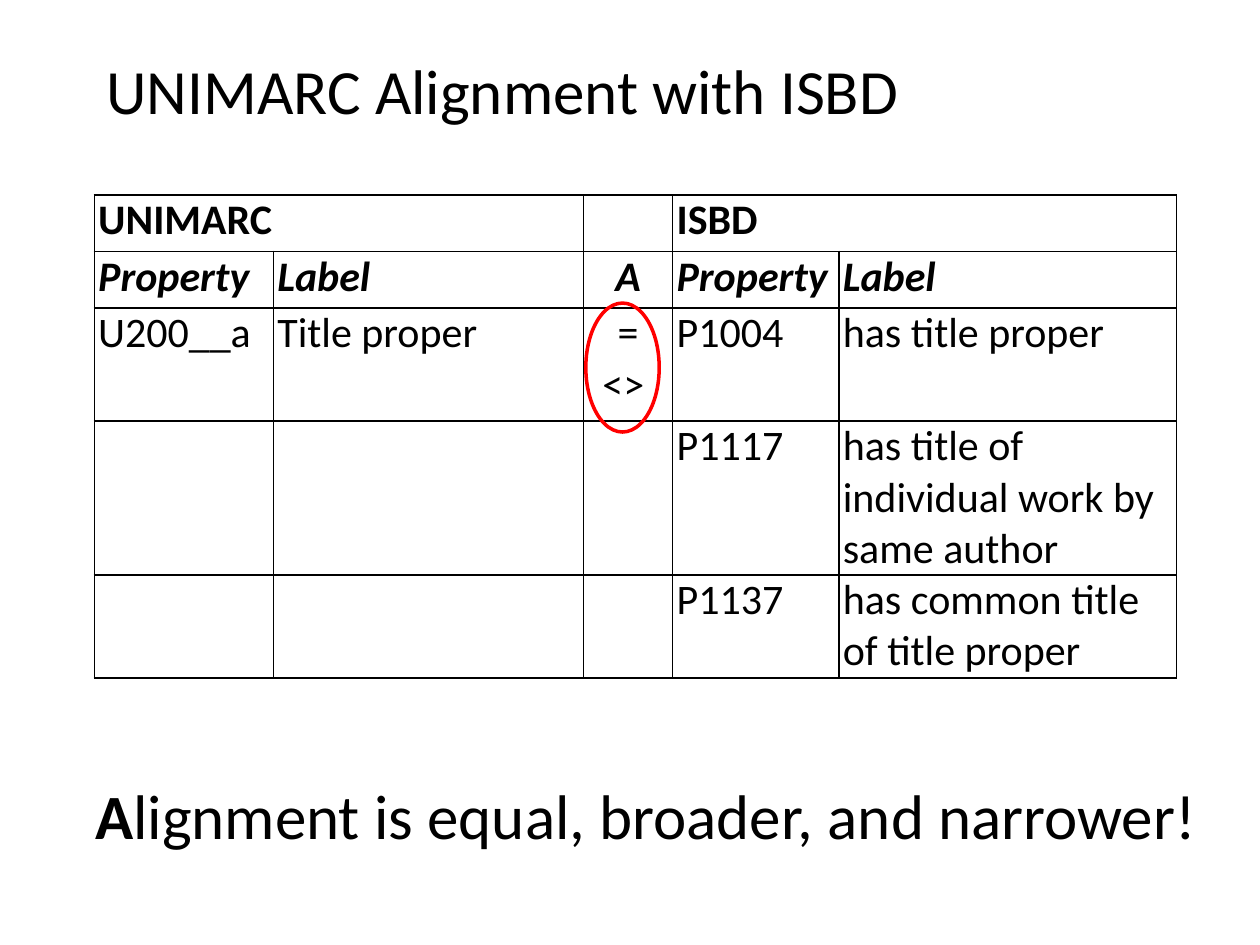
import pptx
import pptx.util
import pptx.oxml
import pptx.dml.color
import pptx.enum.shapes
import pptx.enum.text
from dataclasses import dataclass

Cm, Pt = pptx.util.Cm, pptx.util.Pt
RGB = pptx.dml.color.RGBColor
ALIGN = pptx.enum.text.PP_ALIGN
NS = "http://schemas.openxmlformats.org/drawingml/2006/main"


@dataclass(frozen=True)
class Theme:
    face: str = "Calibri"
    ink: str = "000000"
    mark: str = "FF0000"
    large: int = 36
    body: int = 24
    rule: int = 1
    ring: int = 2


THEME = Theme()

COLS = [3.61, 6.25, 1.80, 3.35, 6.81]
ROWS = [1.14, 1.14, 2.28, 3.10, 2.08]
CELLS = [
    ["UNIMARC", "", "", "ISBD", ""],
    ["Property", "Label", "A", "Property", "Label"],
    ["U200__a", "Title proper", "=\n<> ", "P1004", "has title proper"],
    ["", "", "", "P1117", "has title of individual work by same author"],
    ["", "", "", "P1137", "has common title of title proper"],
]
STYLES = [{"bold": True}, {"bold": True, "italic": True}]  # by head row
MID = 2  # column of alignment signs


def put(item, form):
    for key, val in form.items():
        setattr(item, key, val)


def write(par, text, size, **form):
    run = par.add_run()
    run.text = text
    put(run.font, {"name": THEME.face, "size": Pt(size), "bold": False, **form})
    run.font.color.rgb = RGB.from_string(THEME.ink)


def border(cell):
    props = cell._tc.get_or_add_tcPr()
    for spot, side in enumerate("LRTB"):
        line = pptx.oxml.parse_xml(
            f'<a:ln{side} xmlns:a="{NS}" w="{Pt(THEME.rule)}"><a:solidFill>'
            f'<a:srgbClr val="{THEME.ink}"/></a:solidFill></a:ln{side}>')
        props.insert(spot, line)


def add_line(slide, box, parts, align):
    """One line of large text; parts are (text, bold) pairs."""
    frame = slide.shapes.add_textbox(*map(Cm, box)).text_frame
    put(frame, {"word_wrap": False,
                "auto_size": pptx.enum.text.MSO_AUTO_SIZE.SHAPE_TO_FIT_TEXT})
    par = frame.paragraphs[0]
    par.alignment = align
    for text, bold in parts:
        write(par, text, THEME.large, bold=bold)


def fill_cell(cell, text, style, align):
    put(cell, {"margin_left": Cm(0.08), "margin_right": Cm(0.08),
               "margin_top": 0, "margin_bottom": 0})
    cell.fill.background()
    border(cell)
    if not text:
        return
    for i, part in enumerate(text.split("\n")):
        frame = cell.text_frame
        par = frame.add_paragraph() if i else frame.paragraphs[0]
        par.alignment = align
        write(par, part, THEME.body, **style)


def add_grid(slide, left, top):
    """Alignment table, with a ring around the signs."""
    frame = slide.shapes.add_table(
        len(ROWS), len(COLS), Cm(left), Cm(top), Cm(sum(COLS)), Cm(sum(ROWS)))
    table = frame.table
    put(table, {"first_row": False, "horz_banding": False})
    for col, wide in zip(table.columns, COLS):
        col.width = Cm(wide)
    for row, high in zip(table.rows, ROWS):
        row.height = Cm(high)
    for r, texts in enumerate(CELLS):
        style = STYLES[r] if r < len(STYLES) else {}
        for c, text in enumerate(texts):
            align = ALIGN.CENTER if c == MID else ALIGN.LEFT
            fill_cell(table.cell(r, c), text, style, align)
    for c in (0, MID + 1):
        table.cell(0, c).merge(table.cell(0, c + 1))

    # Ring over the sign cell
    ring = slide.shapes.add_shape(
        pptx.enum.shapes.MSO_SHAPE.OVAL,
        Cm(left + sum(COLS[:MID]) + 0.05), Cm(top + sum(ROWS[:2]) - 0.1),
        Cm(1.48), Cm(2.6))
    ring.shadow.inherit = False
    ring.fill.background()
    ring.line.color.rgb = RGB.from_string(THEME.mark)
    ring.line.width = Pt(THEME.ring)


def main():
    deck = pptx.Presentation()
    put(deck, {"slide_width": Cm(25.4), "slide_height": Cm(19.05)})
    slide = deck.slides.add_slide(deck.slide_layouts[6])
    # Title
    add_line(slide, (1.9, 0.91, 16.64, 1.8),
             [("UNIMARC Alignment with ISBD", False)], ALIGN.LEFT)
    # Table
    add_grid(slide, 1.9, 3.93)
    # Conclusion
    add_line(slide, (1.58, 15.52, 22.88, 1.8),
             [("A", True), ("lignment is equal, broader, and narrower!", False)],
             ALIGN.CENTER)
    deck.save("out.pptx")


if __name__ == "__main__":
    main()
